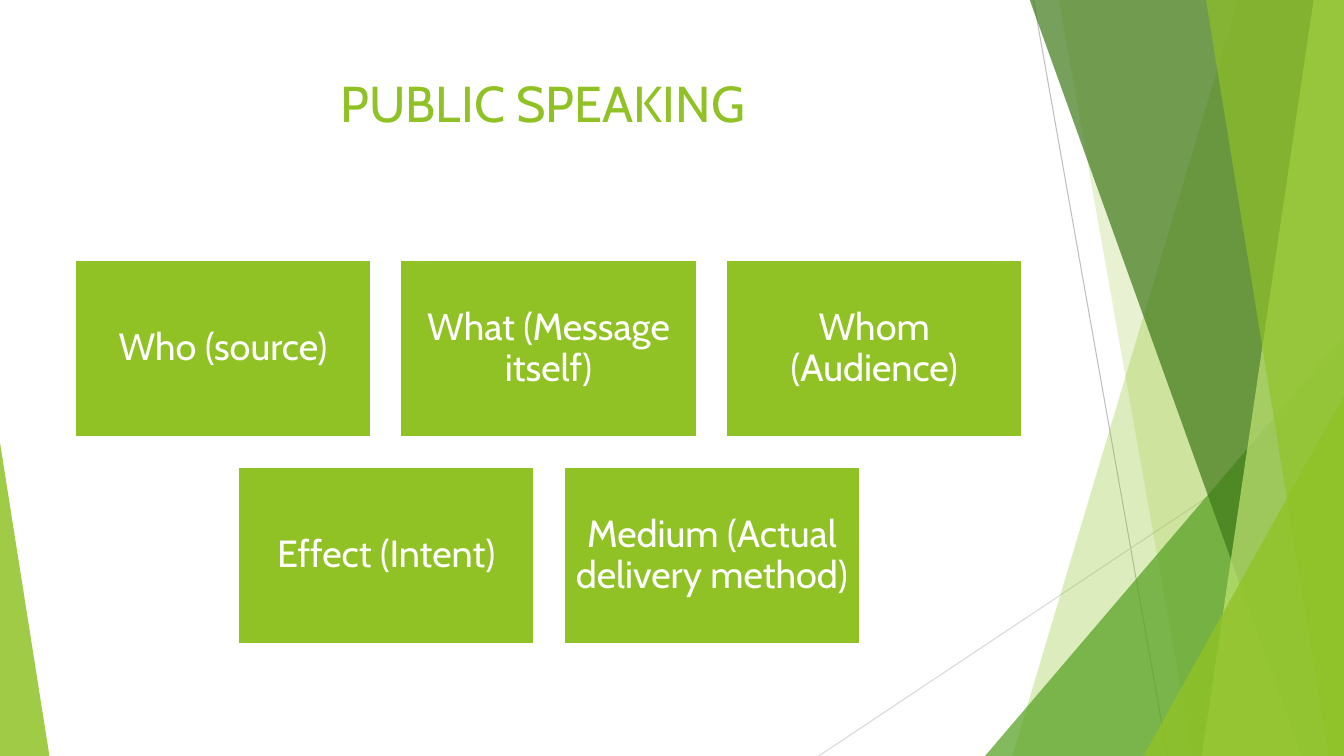
from dataclasses import dataclass

from lxml import etree
from pptx import Presentation
from pptx import util as u
from pptx.dml.color import RGBColor
from pptx.enum import shapes, text
from pptx.oxml import ns

LIME = RGBColor(0x90, 0xC2, 0x26)
GREEN = RGBColor(0x54, 0xA0, 0x21)
FOREST = RGBColor(0x3F, 0x78, 0x19)
PALE_LIME = RGBColor(0xC0, 0xE4, 0x74)
GREY = RGBColor(0xBF, 0xBF, 0xBF)
LIGHT_GREY = RGBColor(0xD9, 0xD9, 0xD9)
WHITE = RGBColor(0xFF, 0xFF, 0xFF)
FONT = "Cabin"
WIDTH, HEIGHT, BLEED = 13.33, 7.5, -0.01


@dataclass
class Ray:
    start: tuple[float, float]
    end: tuple[float, float]
    color: RGBColor


@dataclass
class Band:
    """A strip reaching the right edge of the slide, slanted on its left."""
    top_x: float
    bottom_x: float
    color: RGBColor
    opacity: int


@dataclass
class Wedge:
    """A right triangle on the bottom edge; apex is 0 (left) or 1 (right)."""
    left: float
    top: float
    width: float
    apex: int
    color: RGBColor
    opacity: int


@dataclass
class CardRow:
    left: float
    top: float
    labels: list[str]


RAYS = [
    Ray((10.25, 0), (11.58, HEIGHT), GREY),
    Ray((WIDTH, 4.03), (8.12, HEIGHT), LIGHT_GREY),
]
# Back to front
FACETS = [
    Band(12.28, 10.04, LIME, 30),
    Band(10.5, 11.83, LIME, 20),
    Wedge(9.77, 3.33, 3.56, 1, GREEN, 72),
    Band(10.21, 12.91, FOREST, 70),
    Band(13.03, 11.92, PALE_LIME, 70),
    Band(11.96, 13.18, LIME, 65),
    Wedge(11.34, 3.93, 1.99, 1, LIME, 80),
    Wedge(0, 4.39, 0.49, 0, LIME, 85),
]
CARD_WIDTH, CARD_HEIGHT, CARD_STEP = 2.94, 1.76, 3.23
CARD_ROWS = [
    CardRow(0.74, 2.58, ["Who (source)", "What (Message itself)", "Whom (Audience)"]),
    CardRow(2.36, 4.63, ["Effect (Intent)", "Medium (Actual delivery method)"]),
]


def draw_ray(slide, ray: Ray) -> None:
    line = slide.shapes.add_connector(
        shapes.MSO_CONNECTOR.STRAIGHT,
        *(u.Inches(value) for value in ray.start + ray.end))
    line.line.color.rgb = ray.color
    line.line.width = u.Pt(0.75)
    etree.SubElement(line.element.spPr, ns.qn("a:effectLst"))


def draw_facet(slide, facet: Band | Wedge) -> None:
    if isinstance(facet, Band):
        corners = [(facet.top_x, BLEED), (WIDTH, BLEED),
                   (WIDTH, HEIGHT), (facet.bottom_x, HEIGHT)]
        points = [(u.Inches(x), u.Inches(y)) for x, y in corners]
        builder = slide.shapes.build_freeform(*points[0])
        builder.add_line_segments(points[1:], close=True)
        shape = builder.convert_to_shape()
    else:
        shape = slide.shapes.add_shape(
            shapes.MSO_SHAPE.ISOSCELES_TRIANGLE, u.Inches(facet.left),
            u.Inches(facet.top), u.Inches(facet.width),
            u.Inches(HEIGHT - facet.top))
        shape.adjustments[0] = facet.apex
    shape.shadow.inherit = False
    shape.line.fill.background()
    shape.fill.solid()
    shape.fill.fore_color.rgb = facet.color
    color = shape.element.spPr.find(f"{ns.qn('a:solidFill')}/{ns.qn('a:srgbClr')}")
    etree.SubElement(color, ns.qn("a:alpha"), val=str(facet.opacity * 1000))


def write(frame, words: str, size: float, color: RGBColor,
          line_spacing: float = 1.0) -> None:
    frame.word_wrap = True
    paragraph = frame.paragraphs[0]
    paragraph.alignment = text.PP_ALIGN.CENTER
    paragraph.line_spacing = line_spacing
    run = paragraph.add_run()
    run.text = words
    run.font.name = FONT
    run.font.size = u.Pt(size)
    run.font.color.rgb = color


def draw_card(slide, left: float, top: float, label: str) -> None:
    card = slide.shapes.add_shape(
        shapes.MSO_SHAPE.RECTANGLE, u.Inches(left), u.Inches(top),
        u.Inches(CARD_WIDTH), u.Inches(CARD_HEIGHT))
    card.shadow.inherit = False
    card.fill.solid()
    card.fill.fore_color.rgb = LIME
    card.line.color.rgb = WHITE
    card.line.width = u.Pt(1.5)
    frame = card.text_frame
    frame.vertical_anchor = text.MSO_ANCHOR.MIDDLE
    frame.margin_left = frame.margin_right = u.Inches(0.11)
    frame.margin_top = frame.margin_bottom = u.Inches(0.11)
    write(frame, label, 27, WHITE, line_spacing=0.9)


def main() -> None:
    deck = Presentation()
    deck.slide_width, deck.slide_height = u.Inches(WIDTH), u.Inches(HEIGHT)
    slide = deck.slides.add_slide(deck.slide_layouts[6])

    # Backdrop
    for ray in RAYS:
        draw_ray(slide, ray)
    for facet in FACETS:
        draw_facet(slide, facet)

    # Title
    title = slide.shapes.add_textbox(
        u.Inches(0.74), u.Inches(0.67), u.Inches(9.4), u.Inches(1.44))
    write(title.text_frame, "PUBLIC SPEAKING ", 36, LIME)

    # Elements of public speaking
    for row in CARD_ROWS:
        for column, label in enumerate(row.labels):
            draw_card(slide, row.left + column * CARD_STEP, row.top, label)

    deck.save("out.pptx")


if __name__ == "__main__":
    main()
